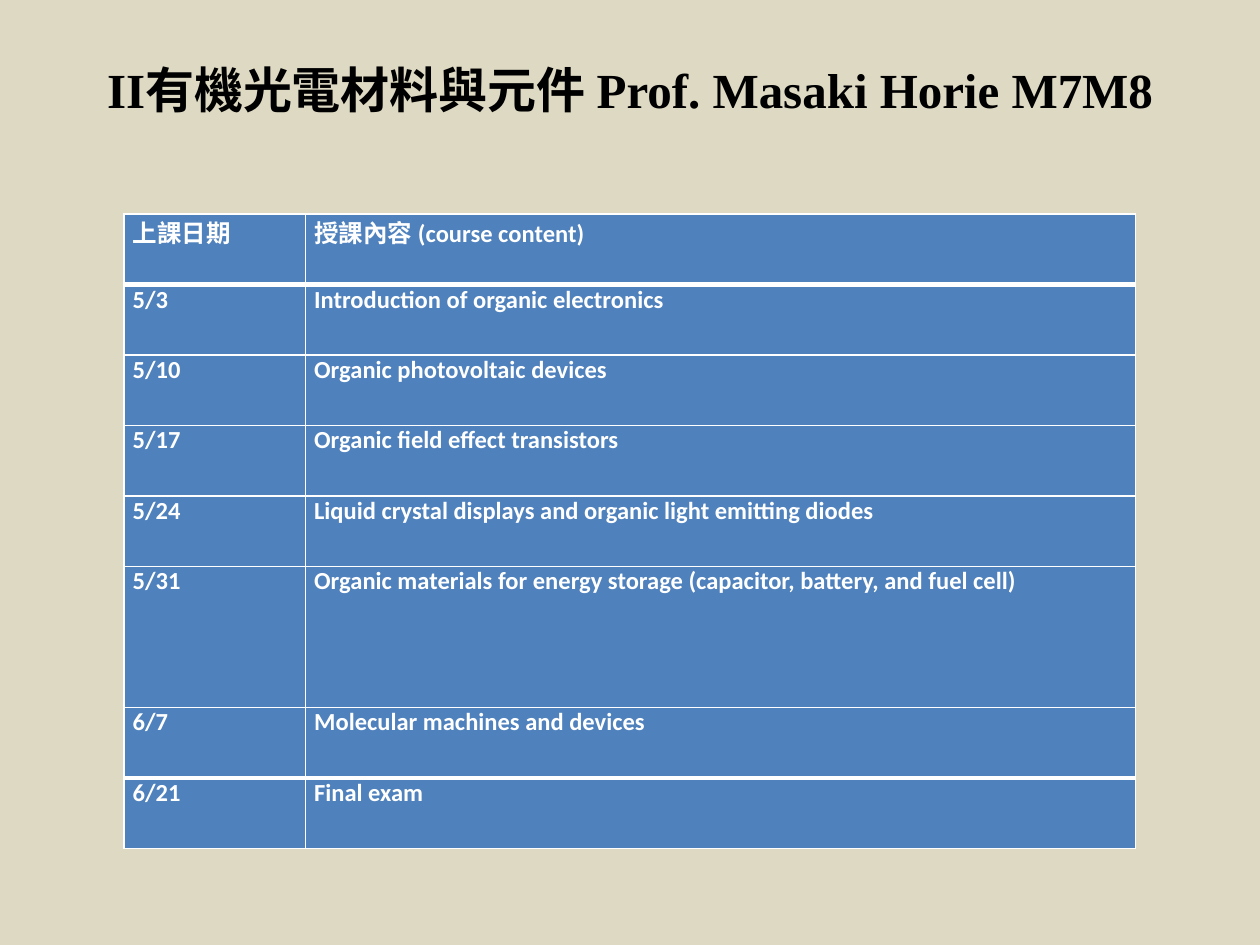
from lxml import etree
from pptx import Presentation
from pptx.dml.color import RGBColor
from pptx.enum.text import MSO_ANCHOR, PP_ALIGN
from pptx.oxml.ns import qn
from pptx.util import Pt

CENTER, JUSTIFY = PP_ALIGN.CENTER, PP_ALIGN.JUSTIFY
TOP, MIDDLE = MSO_ANCHOR.TOP, MSO_ANCHOR.MIDDLE
COLORS = {"background": "DDD9C3", "title": "000000", "cell": "4F81BD", "light": "FFFFFF"}
LATIN, TABLE_FONT, CHINESE = "Times New Roman", "Calibri", "Noto Sans CJK SC"
TITLE_RUNS = [("II", LATIN), ("有機光電材料與元件 ", CHINESE), ("Prof. Masaki Horie M7M8", LATIN)]
SCHEDULE = [
    ("上課日期", "授課內容 (course content)"),
    ("5/3", "Introduction of organic electronics"),
    ("5/10", "Organic photovoltaic devices"),
    ("5/17", "Organic field effect transistors"),
    ("5/24", "Liquid crystal displays and organic light emitting diodes"),
    ("5/31", "Organic materials for energy storage (capacitor, battery, and fuel cell)"),
    ("6/7", "Molecular machines and devices"),
    ("6/21", "Final exam"),
]
COLUMN_WIDTHS = (103.7, 474.5)
ROW_HEIGHT = 40.3
TALL_ROW = 5
THICK_RULES = (1, len(SCHEDULE) - 1)


def format_run(run, font_name, size, color):
    """Set a bold run's Latin and East Asian fonts, size and colour."""
    run.font.name = font_name
    run.font.size = Pt(size)
    run.font.bold = True
    run.font.color.rgb = RGBColor.from_string(COLORS[color])
    etree.SubElement(run.font._element, qn("a:ea"), typeface=CHINESE)


def add_title(slide):
    """Fill the title placeholder, raising the text with its bottom inset."""
    title = slide.shapes.title
    title.left, title.top, title.width, title.height = Pt(36), Pt(21.6), Pt(648), Pt(90)
    frame = title.text_frame
    frame.word_wrap = True
    frame.vertical_anchor = MIDDLE
    frame.margin_bottom = Pt(35)
    paragraph = frame.paragraphs[0]
    paragraph.alignment = CENTER
    for text, font_name in TITLE_RUNS:
        run = paragraph.add_run()
        run.text = text
        format_run(run, font_name, 28, "title")


def set_border(cell, side, width):
    """Draw one side of a cell as a solid light line."""
    properties = cell._tc.get_or_add_tcPr()
    line = etree.SubElement(properties, qn(f"a:ln{side}"), w=str(Pt(width)))
    fill = etree.SubElement(line, qn("a:solidFill"))
    etree.SubElement(fill, qn("a:srgbClr"), val=COLORS["light"])


def format_cell(cell, text, row_index):
    """Write a schedule cell with its insets, borders and fill."""
    cell.text_frame.text = text
    cell.vertical_anchor = TOP
    cell.margin_left = cell.margin_right = Pt(5)
    cell.margin_top = cell.margin_bottom = Pt(0)
    paragraph = cell.text_frame.paragraphs[0]
    if row_index == len(SCHEDULE) - 1:
        paragraph.alignment = JUSTIFY
    format_run(paragraph.runs[0], TABLE_FONT, 14, "light")
    top_width = 3 if row_index in THICK_RULES else 1
    bottom_width = 3 if row_index + 1 in THICK_RULES else 1
    for side, width in (("L", 1), ("R", 1), ("T", top_width), ("B", bottom_width)):
        set_border(cell, side, width)
    cell.fill.solid()
    cell.fill.fore_color.rgb = RGBColor.from_string(COLORS["cell"])


def add_schedule(slide):
    """Add the course schedule table."""
    height = ROW_HEIGHT * (len(SCHEDULE) + 1)
    shape = slide.shapes.add_table(
        len(SCHEDULE), len(COLUMN_WIDTHS), Pt(70.8), Pt(122.4), Pt(sum(COLUMN_WIDTHS)), Pt(height)
    )
    table = shape.table
    table.horz_banding = False
    for column, width in zip(table.columns, COLUMN_WIDTHS):
        column.width = Pt(width)
    for row_index, texts in enumerate(SCHEDULE):
        row = table.rows[row_index]
        row.height = Pt(ROW_HEIGHT * (2 if row_index == TALL_ROW else 1))
        for cell, text in zip(row.cells, texts):
            format_cell(cell, text, row_index)


def main():
    """Build and save the course schedule slide."""
    presentation = Presentation()
    presentation.slide_width, presentation.slide_height = Pt(720), Pt(540)
    slide = presentation.slides.add_slide(presentation.slide_layouts[5])
    slide.background.fill.solid()
    slide.background.fill.fore_color.rgb = RGBColor.from_string(COLORS["background"])
    add_title(slide)
    add_schedule(slide)
    presentation.save("out.pptx")


if __name__ == "__main__":
    main()
